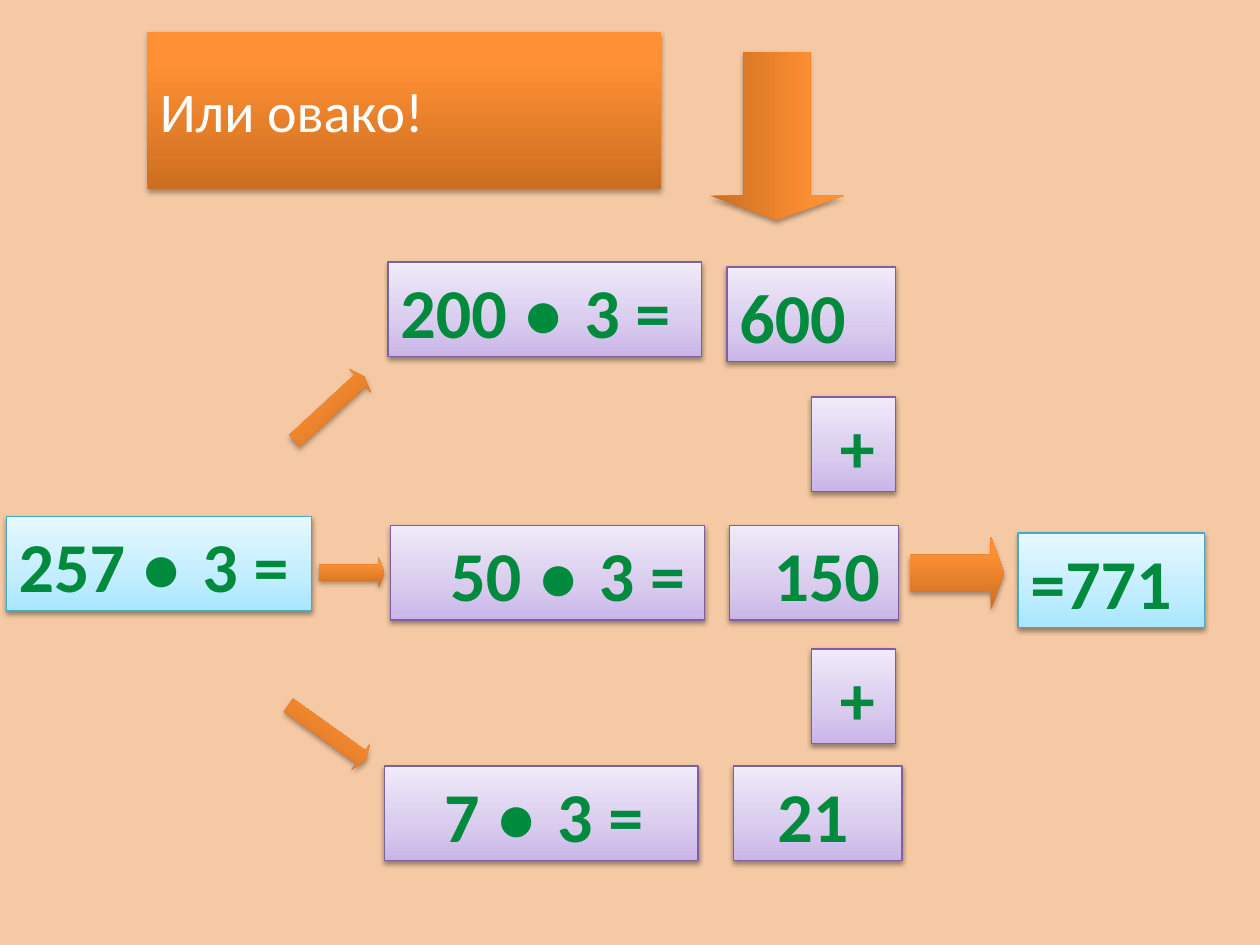
from dataclasses import dataclass

from lxml import etree
from pptx import Presentation
from pptx.dml.color import RGBColor
from pptx.enum.shapes import MSO_SHAPE
from pptx.enum.text import MSO_ANCHOR, PP_ALIGN
from pptx.oxml.ns import qn
from pptx.util import Inches, Pt

RECT, ARROW = MSO_SHAPE.RECTANGLE, MSO_SHAPE.RIGHT_ARROW
TOP, MIDDLE, LEFT = MSO_ANCHOR.TOP, MSO_ANCHOR.MIDDLE, PP_ALIGN.LEFT
COLS, ROWS = 100, 75


@dataclass(frozen=True)
class Paint:
    stops: tuple
    line: str = ""
    shade: tuple = (38, 1.6)  # opacity in percent, distance in points


@dataclass(frozen=True)
class Theme:
    back: str = "F5C9A4"
    ink: str = "008A3E"
    light: str = "FFFFFF"
    font: str = "Calibri"
    dot: str = "Arial"
    big: int = 40
    head: int = 32
    space: float = 1.25  # width of one indent step, in columns
    blue: Paint = Paint(((0, "A7E6FF"), (35, "C1EDFF"), (100, "E7F8FF")), "46AAC5")
    lilac: Paint = Paint(((0, "C9B5E8"), (35, "D8CBEE"), (100, "F0EAF9")), "7D60A0")
    orange: Paint = Paint(((0, "CC6E20"), (80, "FF9034"), (100, "FF9136")), shade=(35, 1.8))


def add(node, tag, **attrs):
    return etree.SubElement(node, qn(tag), {k: str(v) for k, v in attrs.items()})


class Board:
    """Draws on one slide; lengths are columns and rows of the grid."""

    def __init__(self, deck, theme):
        self.theme = theme
        self.col, self.row = deck.slide_width / COLS, deck.slide_height / ROWS
        self.slide = deck.slides.add_slide(deck.slide_layouts[6])
        fill = self.slide.background.fill
        fill.solid()
        fill.fore_color.rgb = RGBColor.from_string(theme.back)

    def shape(self, kind, x, y, w, h, paint):
        """Add a shape with a three-stop gradient and a soft shadow."""
        item = self.slide.shapes.add_shape(
            kind, round(x * self.col), round(y * self.row),
            round(w * self.col), round(h * self.row))
        item.fill.gradient()
        item.fill.gradient_angle = 90
        props = item.fill._xPr
        stops = props.find(qn("a:gradFill")).find(qn("a:gsLst"))
        stops.clear()
        for pos, tone in paint.stops:
            add(add(stops, "a:gs", pos=pos * 1000), "a:srgbClr", val=tone)
        if paint.line:
            item.line.color.rgb = RGBColor.from_string(paint.line)
            item.line.width = Pt(0.75)
        else:
            item.line.fill.background()
        item.shadow.inherit = False
        alpha, dist = paint.shade
        shade = add(props.find(qn("a:effectLst")), "a:outerShdw", blurRad=Pt(3.1),
                    dist=Pt(dist), dir=90 * 60000, rotWithShape=0)
        add(add(shade, "a:srgbClr", val="000000"), "a:alpha", val=alpha * 1000)
        return item

    def text(self, item, parts, size, tone, bold=False, anchor=TOP, indent=0):
        frame = item.text_frame
        frame.word_wrap = True
        frame.vertical_anchor = anchor
        frame.margin_left = Inches(0.1) + round(indent * self.theme.space * self.col)
        para = frame.paragraphs[0]
        para.alignment = LEFT
        para.font.size, para.font.bold = Pt(size), bold
        para.font.color.rgb = RGBColor.from_string(tone)
        gap = para._p.get_or_add_pPr().get_or_add_spcBef()
        add(gap, "a:spcPct", val=20000)
        for words, font in parts:
            run = para.add_run()
            run.text, run.font.name = words, font

    def title(self, words, x, y, w, h):
        t = self.theme
        item = self.shape(RECT, x, y, w, h, t.orange)
        self.text(item, [(words, t.font)], t.head, t.light, anchor=MIDDLE)

    def card(self, words, x, y, w, paint, indent=0):
        """Add a number box; a dot in the words gets its own font."""
        t = self.theme
        left, dot, right = words.partition("● ")
        parts = [(left, t.font), (dot, t.dot), (right, t.font)]
        item = self.shape(RECT, x, y, w, 7.5, paint)
        self.text(item, [p for p in parts if p[0]], t.big, t.ink, True, indent=indent)

    def arrow(self, x, y, w, h, turn=0):
        item = self.shape(ARROW, x, y, w, h, self.theme.orange)
        item.adjustments[0], item.adjustments[1] = 0.5, 0.181
        item.rotation = turn


def main():
    deck = Presentation()
    deck.slide_width, deck.slide_height = Inches(10), Inches(7.5)
    theme = Theme()
    board = Board(deck, theme)

    board.title("Или овако!", 11.7, 2.5, 40.8, 12.5)
    board.card("257 ● 3 =", 0.5, 41, 24.2, theme.blue)
    board.card("=771", 80.8, 42.3, 14.8, theme.blue)

    for words, x, y, indent in (("200 ● 3 =", 30.8, 20.8, 0),
                                ("50 ● 3 =", 31, 41.7, 3),
                                ("7 ● 3 =", 30.5, 60.8, 3)):
        board.card(words, x, y, 24.9, theme.lilac, indent)
    for words, x, y, indent in (("600", 57.7, 21.2, 0),
                                ("150", 57.9, 41.7, 2),
                                ("21", 58.2, 60.8, 2)):
        board.card(words, x, y, 13.4, theme.lilac, indent)
    for y in (31.5, 51.5):
        board.card("+", 64.4, y, 6.7, theme.lilac, 1)

    for place in ((55, 5.5, 13.3, 10.6, 90),
                  (22.4, 31.2, 7.5, 2.5, 317.3),
                  (25.3, 44.2, 5.2, 2.5),
                  (22.2, 56.9, 7.5, 2.5, 35.5),
                  (72.2, 42.6, 7.5, 5.8)):
        board.arrow(*place)

    deck.save("out.pptx")


if __name__ == "__main__":
    main()
